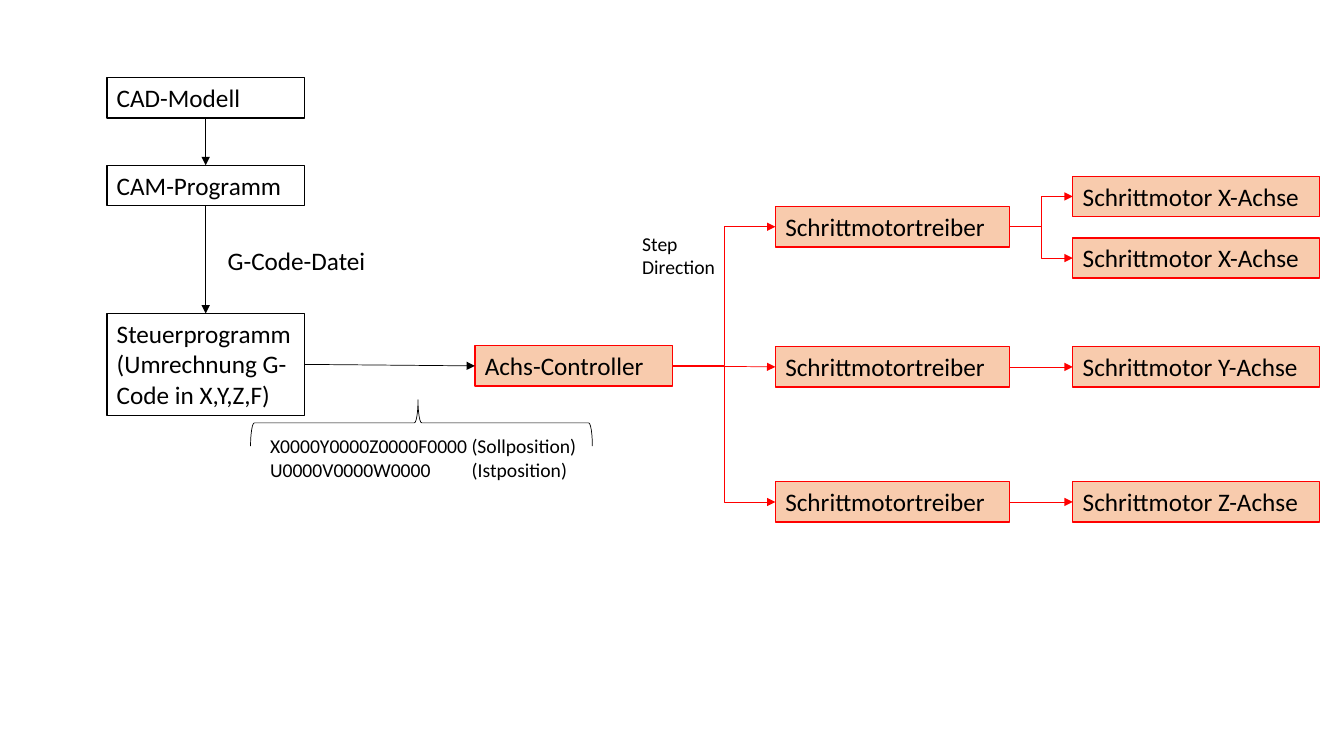
from lxml import etree
from pptx import Presentation
from pptx.dml.color import RGBColor
from pptx.enum import shapes, text
from pptx.oxml.ns import qn
from pptx.util import Inches, Pt

COLORS = {"black": "000000", "white": "FFFFFF", "red": "FF0000", "peach": "F8CBAD"}
FONT = "Calibri"
STYLES = {"software": ("white", "black"), "hardware": ("peach", "red")}  # fill, line
ROW = 0.4

# Columns: left, width
SOFTWARE, CONTROLLER, DRIVER, MOTOR = (1.06, 1.96), (4.71, 1.96), (7.69, 2.32), (10.64, 2.45)

# Key: label, column, top, height, style
STATIONS = {
    "cad": ("CAD-Modell", SOFTWARE, 0.77, ROW, "software"),
    "cam": ("CAM-Programm", SOFTWARE, 1.64, ROW, "software"),
    "control": ("Steuerprogramm (Umrechnung G-Code in X,Y,Z,F)", SOFTWARE, 3.11, 1.01, "software"),
    "axes": ("Achs-Controller", CONTROLLER, 3.43, ROW, "hardware"),
    "driver x": ("Schrittmotortreiber", DRIVER, 2.05, ROW, "hardware"),
    "driver y": ("Schrittmotortreiber", DRIVER, 3.44, ROW, "hardware"),
    "driver z": ("Schrittmotortreiber", DRIVER, 4.78, ROW, "hardware"),
    "motor x1": ("Schrittmotor X-Achse", MOTOR, 1.75, ROW, "hardware"),
    "motor x2": ("Schrittmotor X-Achse", MOTOR, 2.36, ROW, "hardware"),
    "motor y": ("Schrittmotor Y-Achse", MOTOR, 3.44, ROW, "hardware"),
    "motor z": ("Schrittmotor Z-Achse", MOTOR, 4.78, ROW, "hardware"),
}

TOP, LEFT, BOTTOM, RIGHT = range(4)
DOWN, ACROSS = (BOTTOM, TOP), (RIGHT, LEFT)
STRAIGHT, ELBOW = shapes.MSO_CONNECTOR.STRAIGHT, shapes.MSO_CONNECTOR.ELBOW

# From, to, sides, kind, colour
FLOWS = [
    ("cad", "cam", DOWN, STRAIGHT, "black"),
    ("cam", "control", DOWN, STRAIGHT, "black"),
    ("control", "axes", ACROSS, STRAIGHT, "black"),
    ("axes", "driver x", ACROSS, ELBOW, "red"),
    ("axes", "driver y", ACROSS, STRAIGHT, "red"),
    ("axes", "driver z", ACROSS, ELBOW, "red"),
    ("driver x", "motor x1", ACROSS, ELBOW, "red"),
    ("driver x", "motor x2", ACROSS, ELBOW, "red"),
    ("driver y", "motor y", ACROSS, STRAIGHT, "red"),
    ("driver z", "motor z", ACROSS, STRAIGHT, "red"),
]

# Lines, box, size
SIGNALS = [
    (["G-Code-Datei"], (2.16, 2.38, 1.72, 0.4), 18),
    (["X0000Y0000Z0000F0000 (Sollposition)", "U0000V0000W0000 \t(Istposition)"],
     (2.58, 4.26, 3.39, 0.88), 14),
    (["Step", "Direction"], (6.27, 2.25, 1.11, 0.88), 14),
]
BRACE = (3.95, 2.5, 0.46, 3.39)


def color(name):
    return RGBColor.from_string(COLORS[name])


def inches(values):
    return [Inches(value) for value in values]


def write(shape, lines, size):
    frame = shape.text_frame
    frame.text = "\n".join(lines)
    frame.word_wrap = True
    frame.vertical_anchor = text.MSO_ANCHOR.TOP
    for paragraph in frame.paragraphs:
        paragraph.alignment = text.PP_ALIGN.LEFT
        for run in paragraph.runs:
            run.font.name, run.font.size = FONT, Pt(size)
            run.font.color.rgb = color("black")


def draw_line(shape, name, width):
    shape.line.color.rgb = color(name)
    shape.line.width = Pt(width)


prs = Presentation()
prs.slide_width, prs.slide_height = Inches(13.33), Inches(7.5)
slide = prs.slides.add_slide(prs.slide_layouts[6])

# Stations
boxes = {}
for key, (label, (left, width), top, height, style) in STATIONS.items():
    box = slide.shapes.add_shape(shapes.MSO_SHAPE.RECTANGLE, *inches((left, top, width, height)))
    fill, outline = STYLES[style]
    box.shadow.inherit = False
    box.fill.solid()
    box.fill.fore_color.rgb = color(fill)
    draw_line(box, outline, 1)
    write(box, [label], 18)
    boxes[key] = box

# Flow arrows
for source, target, (start, end), kind, name in FLOWS:
    arrow = slide.shapes.add_connector(kind, 0, 0, 0, 0)
    arrow.begin_connect(boxes[source], start)
    arrow.end_connect(boxes[target], end)
    draw_line(arrow, name, 0.5)
    etree.SubElement(arrow.line._get_or_add_ln(), qn("a:tailEnd"), type="triangle")
    etree.SubElement(arrow._element.spPr, qn("a:effectLst"))

# Signal labels
for lines, place, size in SIGNALS:
    write(slide.shapes.add_textbox(*inches(place)), lines, size)

# Brace over the position data
brace = slide.shapes.add_shape(shapes.MSO_SHAPE.RIGHT_BRACE, *inches(BRACE))
brace.rotation = 270
brace.adjustments[0], brace.adjustments[1] = 0.08, 0.49
brace.shadow.inherit = False
brace.fill.background()
draw_line(brace, "black", 0.5)

prs.save("out.pptx")
